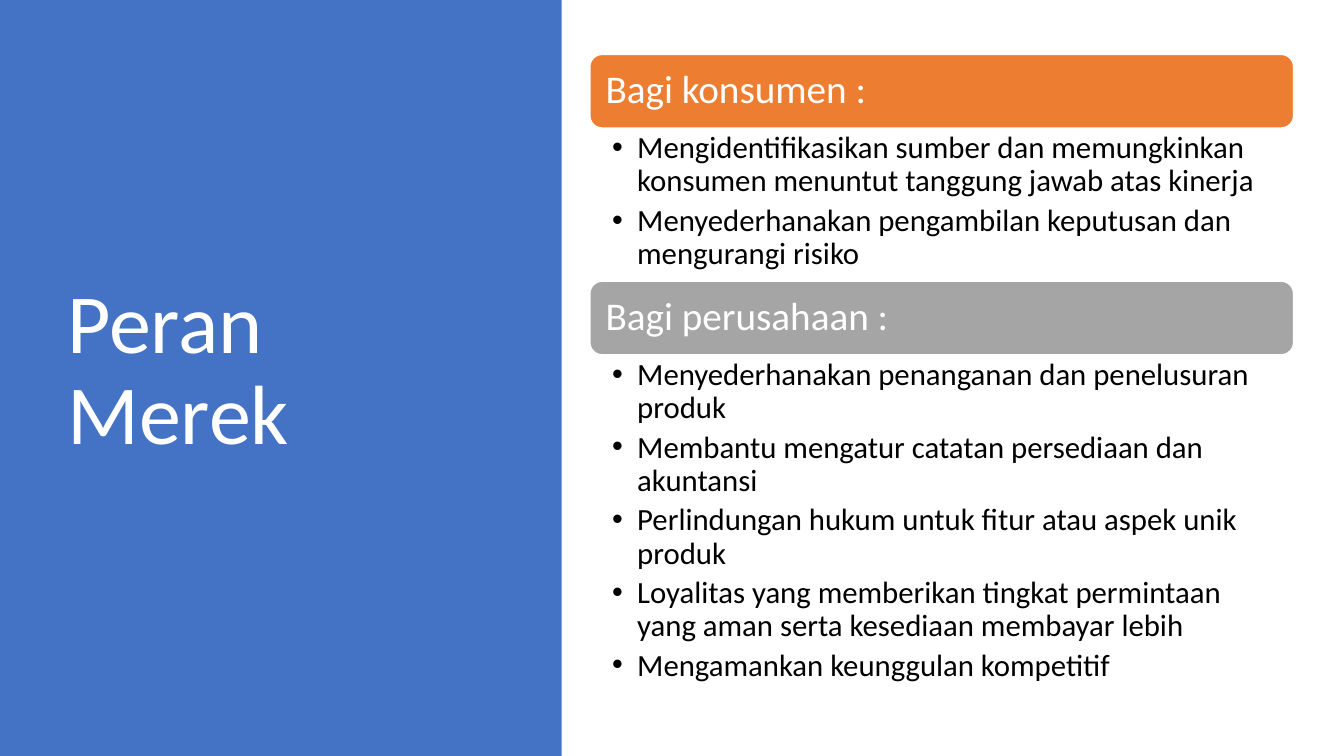
from lxml.etree import SubElement
from pptx import Presentation
from pptx.dml.color import RGBColor
from pptx.enum.shapes import MSO_SHAPE
from pptx.enum.text import MSO_ANCHOR, PP_ALIGN
from pptx.oxml.ns import qn
from pptx.util import Inches, Pt

TITLE = "Peran Merek"
SECTIONS = [
    ("Bagi konsumen :", "ED7D31", 1.52, [
        "Mengidentifikasikan sumber dan memungkinkan konsumen menuntut tanggung jawab atas kinerja",
        "Menyederhanakan pengambilan keputusan dan mengurangi risiko",
    ]),
    ("Bagi perusahaan :", "A5A5A5", 3.42, [
        "Menyederhanakan penanganan dan penelusuran produk",
        "Membantu mengatur catatan persediaan dan akuntansi",
        "Perlindungan hukum untuk fitur atau aspek unik produk",
        "Loyalitas yang memberikan tingkat permintaan yang aman serta kesediaan membayar lebih",
        "Mengamankan keunggulan kompetitif",
    ]),
]
WHITE, BLACK, BLUE = "FFFFFF", "000000", "4472C4"
LEFT, TOP, WIDTH, HEADING_HEIGHT = 5.85, 0.54, 6.98, 0.73


def rgb(code):
    return RGBColor.from_string(code)


def add_panel(slide, preset, box, fill, line=None):
    panel = slide.shapes.add_shape(preset, *map(Inches, box))
    panel.shadow.inherit = False
    panel.fill.solid()
    panel.fill.fore_color.rgb = rgb(fill)
    if line:
        panel.line.color.rgb = rgb(line)
        panel.line.width = Pt(1)
    else:
        panel.line.fill.background()
    return panel


def write(holder, *lines, size, color=WHITE, anchor=MSO_ANCHOR.MIDDLE,
          inset=(0.1, 0.05), bullet=None, after=0):
    frame = holder.text_frame
    frame.word_wrap = True
    frame.vertical_anchor = anchor
    frame.margin_left = frame.margin_right = Inches(inset[0])
    frame.margin_top = frame.margin_bottom = Inches(inset[1])
    for index, line in enumerate(lines):
        paragraph = frame.add_paragraph() if index else frame.paragraphs[0]
        paragraph.alignment = PP_ALIGN.LEFT
        paragraph.line_spacing = 0.9
        paragraph.space_after = Pt(after)
        run = paragraph.add_run()
        run.text = line
        run.font.name = "Calibri"
        run.font.size = Pt(size)
        run.font.color.rgb = rgb(color)
        if bullet:
            paragraph.level = 1
            properties = paragraph._p.get_or_add_pPr()
            properties.set("marL", str(Inches(0.25)))
            properties.set("indent", str(-Inches(0.25)))
            SubElement(properties, qn("a:buFont"), typeface="Arial")
            SubElement(properties, qn("a:buChar"), char=bullet)


def main():
    deck = Presentation()
    deck.slide_width, deck.slide_height = Inches(13.33), Inches(7.5)
    slide = deck.slides.add_slide(deck.slide_layouts[6])

    add_panel(slide, MSO_SHAPE.RECTANGLE, (0, 0, 5.57, 7.5), BLUE)
    title = slide.shapes.add_textbox(*map(Inches, (0.57, 0.68, 4.16, 6.02)))
    write(title, TITLE, size=60)

    top = TOP
    for heading, fill, height, roles in SECTIONS:
        banner = add_panel(slide, MSO_SHAPE.ROUNDED_RECTANGLE,
                           (LEFT, top, WIDTH, HEADING_HEIGHT), fill, line=WHITE)
        write(banner, heading, size=28, inset=(0.12, 0.12))
        top += HEADING_HEIGHT
        role_list = slide.shapes.add_textbox(*map(Inches, (LEFT, top, WIDTH, height)))
        write(role_list, *roles, size=22, color=BLACK, anchor=MSO_ANCHOR.TOP,
              inset=(0.22, 0.04), bullet="•", after=4.4)
        top += height

    deck.save("out.pptx")


if __name__ == "__main__":
    main()
